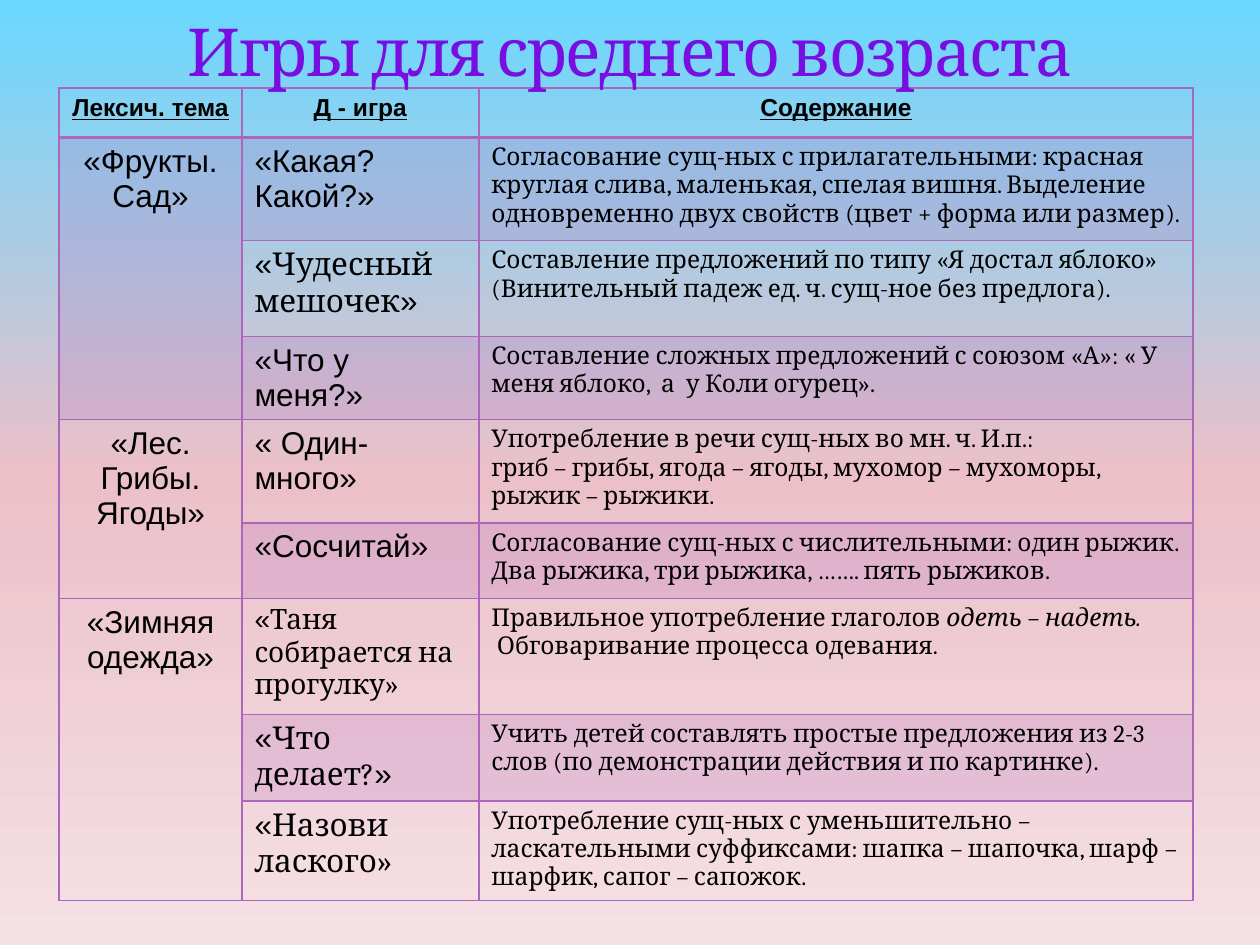
from lxml.etree import SubElement
from pptx import Presentation
from pptx.dml.color import RGBColor
from pptx.enum.text import MSO_ANCHOR, PP_ALIGN
from pptx.oxml import parse_xml
from pptx.oxml.ns import nsdecls, qn
from pptx.util import Inches, Pt

PURPLE = RGBColor(0x78, 0x0E, 0xE2)
OUTLINE = RGBColor(0x9C, 0x38, 0x88)
MAUVE = RGBColor(0xAC, 0x66, 0xBB)
BLACK = RGBColor(0, 0, 0)
SKY = RGBColor(0x69, 0xD8, 0xFF)
ROSE = RGBColor(0xEB, 0xC0, 0xC9)
BLUSH = RGBColor(0xF5, 0xE0, 0xE5)
SANS, SERIF = "Arial", "Cambria"

# Grid of the table, in inches
TABLE_LEFT, TABLE_TOP = 0.47, 0.7
COLUMNS = [1.45, 1.88, 5.67]
ROWS = [0.39, 0.82, 0.76, 0.66, 0.82, 0.6, 0.92, 0.69, 0.79]

HEADERS = ["Лексич. тема", "Д - игра", "Содержание"]
# Theme, first row, last row
THEMES = [("«Фрукты. Сад»", 1, 3), ("«Лес. Грибы. Ягоды»", 4, 5), ("«Зимняя одежда»", 6, 8)]
# Size of the game's name, its runs, paragraphs of the content
GAMES = [
    (18, [("«Какая? Какой?»", SANS)],
     ["Согласование сущ-ных с прилагательными: красная круглая слива, маленькая, "
      "спелая вишня. Выделение одновременно двух свойств (цвет + форма или размер)."]),
    (18, [("«", SANS), ("Чудесный мешочек", SERIF), ("»", SANS)],
     ["Составление предложений по типу «Я достал яблоко» "
      "(Винительный падеж ед. ч. сущ-ное без предлога)."]),
    (18, [("«Что у меня?»", SANS)],
     ["Составление сложных предложений с союзом «А»: « У меня яблоко,  а  у Коли огурец»."]),
    (18, [("« Один-много»", SANS)],
     ["Употребление в речи сущ-ных во мн. ч. И.п.:",
      "гриб – грибы, ягода – ягоды, мухомор – мухоморы, рыжик – рыжики."]),
    (18, [("«Сосчитай»", SANS)],
     ["Согласование сущ-ных с числительными: один рыжик. "
      "Два рыжика, три рыжика, ……. пять рыжиков."]),
    (16, [("«", SANS), ("Таня собирается на прогулку»", SERIF)],
     ["Правильное употребление глаголов |одеть – надеть.",
      " Обговаривание процесса одевания."]),
    (18, [("«", SANS), ("Что делает?", SERIF), ("»", SANS)],
     ["Учить детей составлять простые предложения из 2-3 слов "
      "(по демонстрации действия и по картинке)."]),
    (18, [("«", SANS), ("Назови лаского»", SERIF)],
     ["Употребление сущ-ных с уменьшительно – ласкательными суффиксами: "
      "шапка – шапочка, шарф – шарфик, сапог – сапожок."]),
]


def add_run(paragraph, text, font, size, color=BLACK, bold=False, italic=False, underline=False):
    run = paragraph.add_run()
    run.text = text
    run.font.name, run.font.size = font, Pt(size)
    run.font.bold, run.font.italic, run.font.underline = bold, italic, underline
    run.font.color.rgb = color
    return run


def set_background(slide):
    stops = "".join(f'<a:gs pos="{position}"><a:srgbClr val="{color}"/></a:gs>'
                    for position, color in [(0, SKY), (50000, ROSE), (100000, BLUSH)])
    slide.background.fill.solid()
    properties = slide.background.fill._xPr
    properties.replace(properties.find(qn("a:solidFill")), parse_xml(
        f'<a:gradFill {nsdecls("a")} rotWithShape="1"><a:gsLst>{stops}</a:gsLst>'
        '<a:lin ang="5400000" scaled="0"/></a:gradFill>'))


def add_title(slide, width, height, text):
    box = slide.shapes.add_textbox(int(width * 0.05), int(height * 0.023),
                                   int(width * 0.9), int(height * 0.072))
    frame = box.text_frame
    frame.word_wrap = True
    frame.vertical_anchor = MSO_ANCHOR.BOTTOM
    frame.margin_top = frame.margin_bottom = 0
    paragraph = frame.paragraphs[0]
    paragraph.alignment = PP_ALIGN.CENTER
    run = add_run(paragraph, text, SERIF, 37.8, PURPLE)
    # Tight letters with a thin, mostly transparent outline
    properties = run.font._element
    properties.set("spc", "-100")
    properties.insert(0, parse_xml(
        f'<a:ln {nsdecls("a")} w="3175"><a:solidFill><a:srgbClr val="{OUTLINE}">'
        '<a:alpha val="25000"/></a:srgbClr></a:solidFill></a:ln>'))


def style_cell(cell, row):
    """Draw the borders; tint every odd row."""
    properties = cell._tc.get_or_add_tcPr()
    widths = {"lnL": 1, "lnR": 1, "lnT": 2 if row == 1 else 1, "lnB": 2 if row == 0 else 1}
    for side, width in widths.items():
        properties.append(parse_xml(
            f'<a:{side} {nsdecls("a")} w="{Pt(width)}"><a:solidFill>'
            f'<a:srgbClr val="{MAUVE}"/></a:solidFill></a:{side}>'))
    if row % 2:
        cell.fill.solid()
        cell.fill.fore_color.rgb = MAUVE
        color = properties.find(qn("a:solidFill")).find(qn("a:srgbClr"))
        SubElement(color, qn("a:alpha")).set("val", "20000")
    else:
        cell.fill.background()


def centre_text(cell, text, size, **style):
    paragraph = cell.text_frame.paragraphs[0]
    paragraph.alignment = PP_ALIGN.CENTER
    add_run(paragraph, text, SANS, size, **style)


def fill_content(cell, lines):
    """Write one paragraph a line; what follows a bar is italic."""
    frame = cell.text_frame
    for index, line in enumerate(lines):
        paragraph = frame.add_paragraph() if index else frame.paragraphs[0]
        for part, text in enumerate(line.split("|")):
            add_run(paragraph, text, SERIF, 14, italic=part == 1)


def add_games_table(slide):
    table = slide.shapes.add_table(
        len(ROWS), len(COLUMNS), Inches(TABLE_LEFT), Inches(TABLE_TOP),
        Inches(sum(COLUMNS)), Inches(sum(ROWS))).table
    table.horz_banding = False
    for column, width in zip(table.columns, COLUMNS):
        column.width = Inches(width)
    for index, (row, height) in enumerate(zip(table.rows, ROWS)):
        row.height = Inches(height)
        for cell in row.cells:
            style_cell(cell, index)

    # Header row
    for column, header in enumerate(HEADERS):
        centre_text(table.cell(0, column), header, 14, bold=True, underline=True)

    # Themes span their games
    for theme, first, last in THEMES:
        table.cell(first, 0).merge(table.cell(last, 0))
        centre_text(table.cell(first, 0), theme, 18)

    # Games and their content
    for row, (size, name, content) in enumerate(GAMES, start=1):
        paragraph = table.cell(row, 1).text_frame.paragraphs[0]
        for text, font in name:
            add_run(paragraph, text, font, size)
        fill_content(table.cell(row, 2), content)


def main():
    presentation = Presentation()
    presentation.slide_width, presentation.slide_height = Inches(10), Inches(7.5)
    slide = presentation.slides.add_slide(presentation.slide_layouts[6])
    set_background(slide)
    add_games_table(slide)
    add_title(slide, presentation.slide_width, presentation.slide_height,
              "Игры для среднего возраста")
    presentation.save("out.pptx")


if __name__ == "__main__":
    main()
